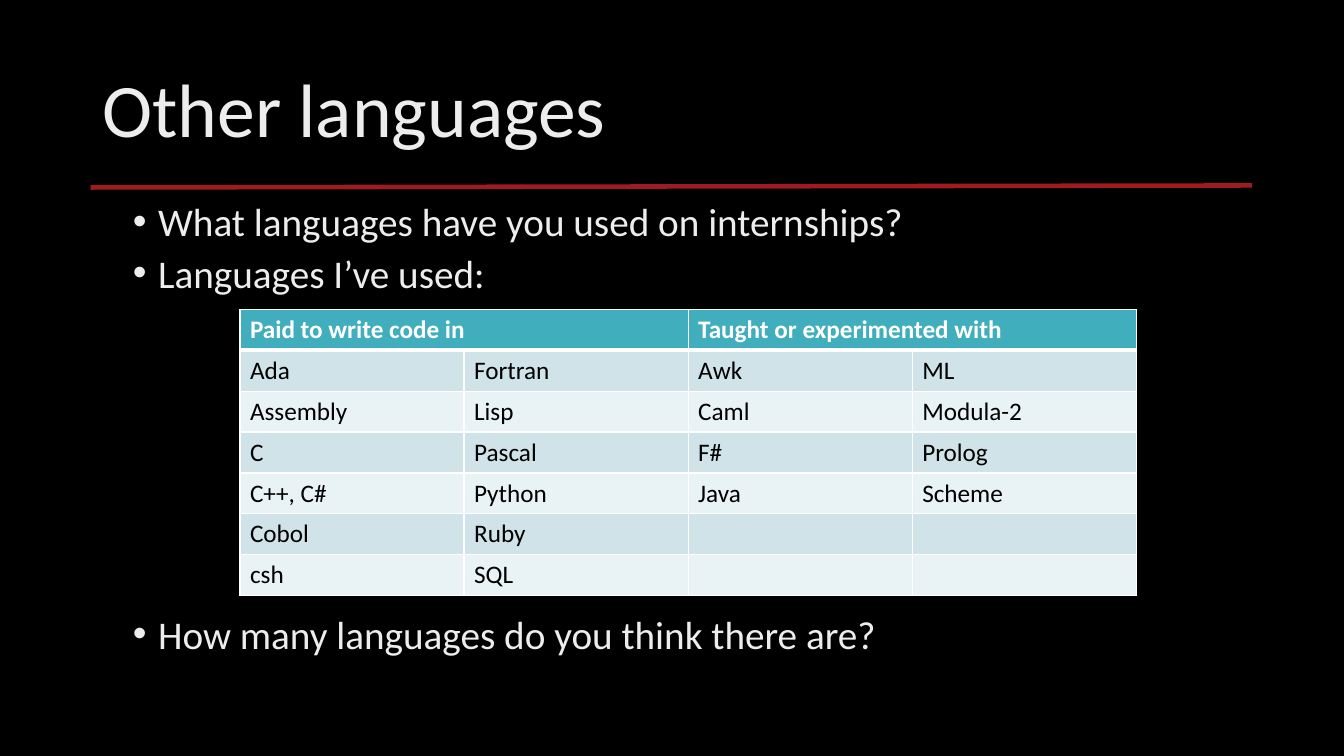
from lxml import etree
from pptx import Presentation
from pptx import util as u
from pptx.dml.color import RGBColor
from pptx.enum import shapes, text
from pptx.oxml import ns

BLACK = RGBColor(0x00, 0x00, 0x00)
WHITE = RGBColor(0xFF, 0xFF, 0xFF)
SILVER = RGBColor(0xED, 0xED, 0xED)
RED = RGBColor(0x9E, 0x1B, 0x20)
TEAL = RGBColor(0x41, 0xAE, 0xBD)
BANDS = (RGBColor(0xE9, 0xF2, 0xF4), RGBColor(0xCF, 0xE3, 0xE8))

LANGUAGES = [
    ("Paid to write code in", "", "Taught or experimented with", ""),
    ("Ada", "Fortran", "Awk", "ML"),
    ("Assembly", "Lisp", "Caml", "Modula-2"),
    ("C", "Pascal", "F#", "Prolog"),
    ("C++, C#", "Python", "Java", "Scheme"),
    ("Cobol", "Ruby", "", ""),
    ("csh", "SQL", "", ""),
]
TABLE_GAP = 231
QUESTIONS = [
    ("What languages have you used on internships?", 0),
    ("Languages I’ve used:", 10),
    ("How many languages do you think there are?", TABLE_GAP),
]


def write(para, words, size=18, color=BLACK, bold=False, spacing=None, before=0):
    """Add one formatted span of text to a paragraph."""
    para.line_spacing = spacing
    para.space_before = u.Pt(before)
    span = para.add_run()
    span.text = words
    span.font.name = "Calibri"
    span.font.size = u.Pt(size)
    span.font.bold = bold
    span.font.color.rgb = color


def add_bullet(para):
    """Give a paragraph a round bullet with a hanging indent."""
    properties = para._p.get_or_add_pPr()
    indent = u.Inches(0.25)
    properties.set("marL", str(indent))
    properties.set("indent", str(-indent))
    etree.SubElement(properties, ns.qn("a:buFont"), typeface="Arial")
    etree.SubElement(properties, ns.qn("a:buChar"), char="•")


def add_box(page, left, top, width, height, anchor):
    """Add a wrapping text box and return its text frame."""
    box = page.shapes.add_textbox(
        u.Inches(left), u.Inches(top), u.Inches(width), u.Inches(height))
    frame = box.text_frame
    frame.word_wrap = True
    frame.vertical_anchor = anchor
    return frame


def add_rule(page):
    """Draw the red rule under the title."""
    rule = page.shapes.add_connector(
        shapes.MSO_CONNECTOR.STRAIGHT,
        u.Inches(0.9), u.Inches(1.86), u.Inches(12.42), u.Inches(1.84))
    rule.line.color.rgb = RED
    rule.line.width = u.Pt(3.25)
    etree.SubElement(rule._element.spPr, ns.qn("a:effectLst"))


def add_title(page):
    """Write the slide title."""
    frame = add_box(page, 0.92, 0.4, 11.5, 1.45, text.MSO_ANCHOR.MIDDLE)
    write(frame.paragraphs[0], "Other languages", size=54, color=SILVER, spacing=0.9)


def add_questions(page):
    """Write the bulleted lines, leaving room for the table."""
    frame = add_box(page, 1.22, 2, 11.19, 4.76, text.MSO_ANCHOR.TOP)
    for index, (words, before) in enumerate(QUESTIONS):
        para = frame.add_paragraph() if index else frame.paragraphs[0]
        add_bullet(para)
        write(para, words, size=28, color=SILVER, spacing=0.8, before=before)


def set_borders(cell, top, bottom):
    """Draw white borders around a cell, with widths in points."""
    properties = cell._tc.get_or_add_tcPr()
    sides = (("L", 1), ("R", 1), ("T", top), ("B", bottom))
    for index, (side, width) in enumerate(sides):
        border = etree.Element(ns.qn("a:ln" + side), w=str(u.Pt(width)))
        fill = etree.SubElement(border, ns.qn("a:solidFill"))
        etree.SubElement(fill, ns.qn("a:srgbClr"), val=str(WHITE))
        properties.insert(index, border)


def add_languages(page):
    """Build the banded table of languages."""
    table = page.shapes.add_table(
        len(LANGUAGES), len(LANGUAGES[0]),
        u.Inches(2.38), u.Inches(3.07), u.Inches(8.89), u.Inches(2.84)).table
    for row, names in enumerate(LANGUAGES):
        header = row == 0
        for column, name in enumerate(names):
            cell = table.cell(row, column)
            cell.fill.solid()
            cell.fill.fore_color.rgb = TEAL if header else BANDS[row % 2]
            set_borders(cell, top=3 if row == 1 else 1, bottom=3 if header else 1)
            if name:
                write(cell.text_frame.paragraphs[0], name,
                      color=WHITE if header else BLACK, bold=header)
    for column in (0, 2):
        table.cell(0, column).merge(table.cell(0, column + 1))


def main():
    """Build the slide and save the deck."""
    deck = Presentation()
    deck.slide_width = u.Inches(13.33)
    deck.slide_height = u.Inches(7.5)
    page = deck.slides.add_slide(deck.slide_layouts[6])
    page.background.fill.solid()
    page.background.fill.fore_color.rgb = BLACK
    add_rule(page)
    add_title(page)
    add_questions(page)
    add_languages(page)
    deck.save("out.pptx")


if __name__ == "__main__":
    main()
